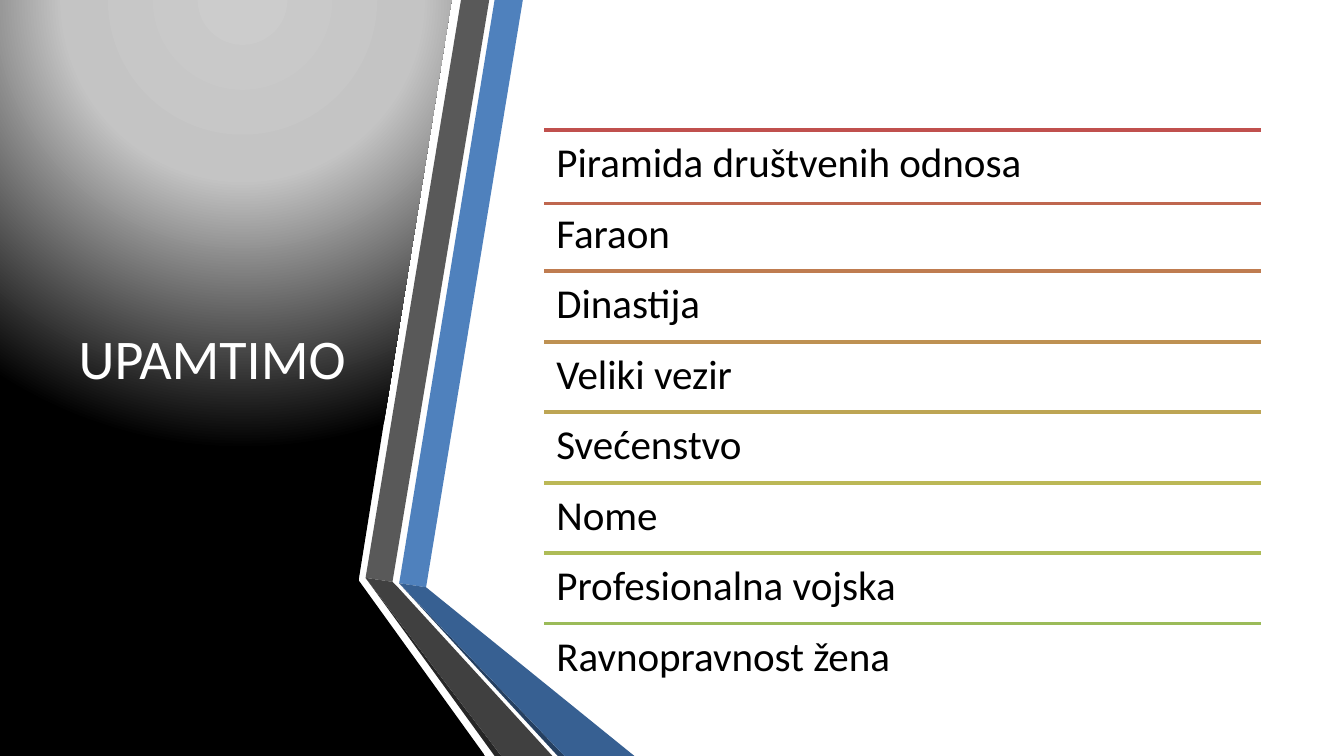
from pptx import Presentation
from pptx.dml.color import RGBColor
from pptx.enum.shapes import MSO_CONNECTOR
from pptx.enum.text import MSO_ANCHOR, PP_ALIGN
from pptx.oxml import parse_xml
from pptx.oxml.ns import nsdecls, qn
from pptx.util import Inches, Pt
from lxml import etree

WHITE = RGBColor(0xFF, 0xFF, 0xFF)
BLACK = RGBColor(0x00, 0x00, 0x00)
BLUE = RGBColor(0x4F, 0x81, 0xBD)
BLUE_MID = RGBColor(0x37, 0x60, 0x92)
BLUE_DARK = RGBColor(0x25, 0x40, 0x61)
GREY = RGBColor(0x59, 0x59, 0x59)
GREY_MID = RGBColor(0x40, 0x40, 0x40)
GREY_DARK = RGBColor(0x26, 0x26, 0x26)

FONT = "Calibri"
SLIDE_WIDTH = 10
BOTTOM = SLIDE_WIDTH * 9 / 16

PANEL = [(2.64, 0), (3.36, 0), (2.67, 4.31), (2.67, 4.32), (3.61, BOTTOM),
         (0, BOTTOM), (0, 0)]
PANEL_STOPS = [(0, "CCCCCC"), (40, "C4C4C4"), (100, "000000")]

RIBBONS = [
    (BLUE, [(2.97, 4.34), (3.17, 4.37), (3.89, 0), (3.68, 0)]),
    (GREY, [(3.64, 0), (3.43, 0), (2.72, 4.3), (2.92, 4.33)]),
    (GREY_DARK, [(2.72, 4.3), (3.68, BOTTOM), (3.73, BOTTOM)]),
    (BLUE_DARK, [(2.97, 4.34), (4.15, BOTTOM), (4.2, BOTTOM)]),
    (BLUE_MID, [(2.97, 4.34), (4.2, BOTTOM), (4.72, BOTTOM), (3.17, 4.37)]),
    (GREY_MID, [(4.11, BOTTOM), (2.96, 4.37), (2.92, 4.33), (2.72, 4.3),
                (3.73, BOTTOM)]),
]

TERMS = [
    ("Piramida društvenih odnosa", RGBColor(0xC0, 0x50, 0x4D)),
    ("Faraon", RGBColor(0xBF, 0x67, 0x4F)),
    ("Dinastija", RGBColor(0xBF, 0x7C, 0x50)),
    ("Veliki vezir", RGBColor(0xBE, 0x91, 0x52)),
    ("Svećenstvo", RGBColor(0xBD, 0xA5, 0x54)),
    ("Nome", RGBColor(0xBC, 0xB8, 0x56)),
    ("Profesionalna vojska", RGBColor(0xAE, 0xBC, 0x57)),
    ("Ravnopravnost žena", RGBColor(0x9B, 0xBB, 0x59)),
]
LIST_LEFT, LIST_WIDTH = 4.05, 5.33
FIRST_TOP, LAST_TOP = 0.97, 4.64
ROW_HEIGHT = 0.52
RULE_SHIFT = {1: 0.02}  # the second rule sits slightly below its row top


def add_polygon(shapes, points):
    corners = [(Inches(x), Inches(y)) for x, y in points]
    builder = shapes.build_freeform(*corners[0])
    builder.add_line_segments(corners[1:], close=True)
    polygon = builder.convert_to_shape()
    polygon.shadow.inherit = False
    polygon.line.fill.background()
    return polygon


def fill_with_spotlight(polygon, stops):
    """Apply a circular gradient whose centre lies above the shape."""
    polygon.fill.background()
    stop_xml = "".join(
        f'<a:gs pos="{position * 1000}"><a:srgbClr val="{colour}"/></a:gs>'
        for position, colour in stops)
    gradient = parse_xml(
        f'<a:gradFill {nsdecls("a")} rotWithShape="1"><a:gsLst>{stop_xml}</a:gsLst>'
        '<a:path path="circle"><a:fillToRect l="50000" t="-80000" r="50000" '
        'b="180000"/></a:path></a:gradFill>')
    properties = polygon._element.spPr
    properties.replace(properties.find(qn("a:noFill")), gradient)


def add_ribbons(slide):
    ribbons = slide.shapes.add_group_shape()
    for colour, points in RIBBONS:
        ribbon = add_polygon(ribbons.shapes, points)
        ribbon.fill.solid()
        ribbon.fill.fore_color.rgb = colour


def add_text(shapes, text, left, top, width, height, size, colour):
    box = shapes.add_textbox(Inches(left), Inches(top), Inches(width), Inches(height))
    frame = box.text_frame
    frame.word_wrap = True
    frame.text = text
    font = frame.paragraphs[0].runs[0].font
    font.name, font.size, font.color.rgb = FONT, Pt(size), colour
    return frame


def add_title(slide):
    frame = add_text(slide.shapes, "UPAMTIMO", 0.44, 0.56, 2.28, 4.19, 30, WHITE)
    frame.vertical_anchor = MSO_ANCHOR.MIDDLE
    frame.paragraphs[0].alignment = PP_ALIGN.CENTER


def add_rule(shapes, top, colour):
    rule = shapes.add_connector(
        MSO_CONNECTOR.STRAIGHT, Inches(LIST_LEFT), Inches(top),
        Inches(LIST_LEFT + LIST_WIDTH), Inches(top))
    rule.line.color.rgb = colour
    rule.line.width = Pt(2)
    etree.SubElement(rule._element.spPr, qn("a:effectLst"))


def add_term(shapes, term, top):
    frame = add_text(shapes, term, LIST_LEFT, top, LIST_WIDTH, ROW_HEIGHT, 22, BLACK)
    frame.margin_left = frame.margin_right = Inches(0.09)
    frame.margin_top = frame.margin_bottom = Inches(0.09)
    frame.paragraphs[0].line_spacing = 0.9


def add_term_list(slide):
    rows = slide.shapes.add_group_shape().shapes
    pitch = (LAST_TOP - FIRST_TOP) / (len(TERMS) - 1)
    for index, (term, colour) in enumerate(TERMS):
        top = FIRST_TOP + index * pitch
        add_rule(rows, top + RULE_SHIFT.get(index, 0), colour)
        add_term(rows, term, top)


def main():
    presentation = Presentation()
    presentation.slide_width = Inches(SLIDE_WIDTH)
    presentation.slide_height = Inches(BOTTOM)
    slide = presentation.slides.add_slide(presentation.slide_layouts[6])
    fill_with_spotlight(add_polygon(slide.shapes, PANEL), PANEL_STOPS)
    add_ribbons(slide)
    add_title(slide)
    add_term_list(slide)
    presentation.save("out.pptx")


if __name__ == "__main__":
    main()
